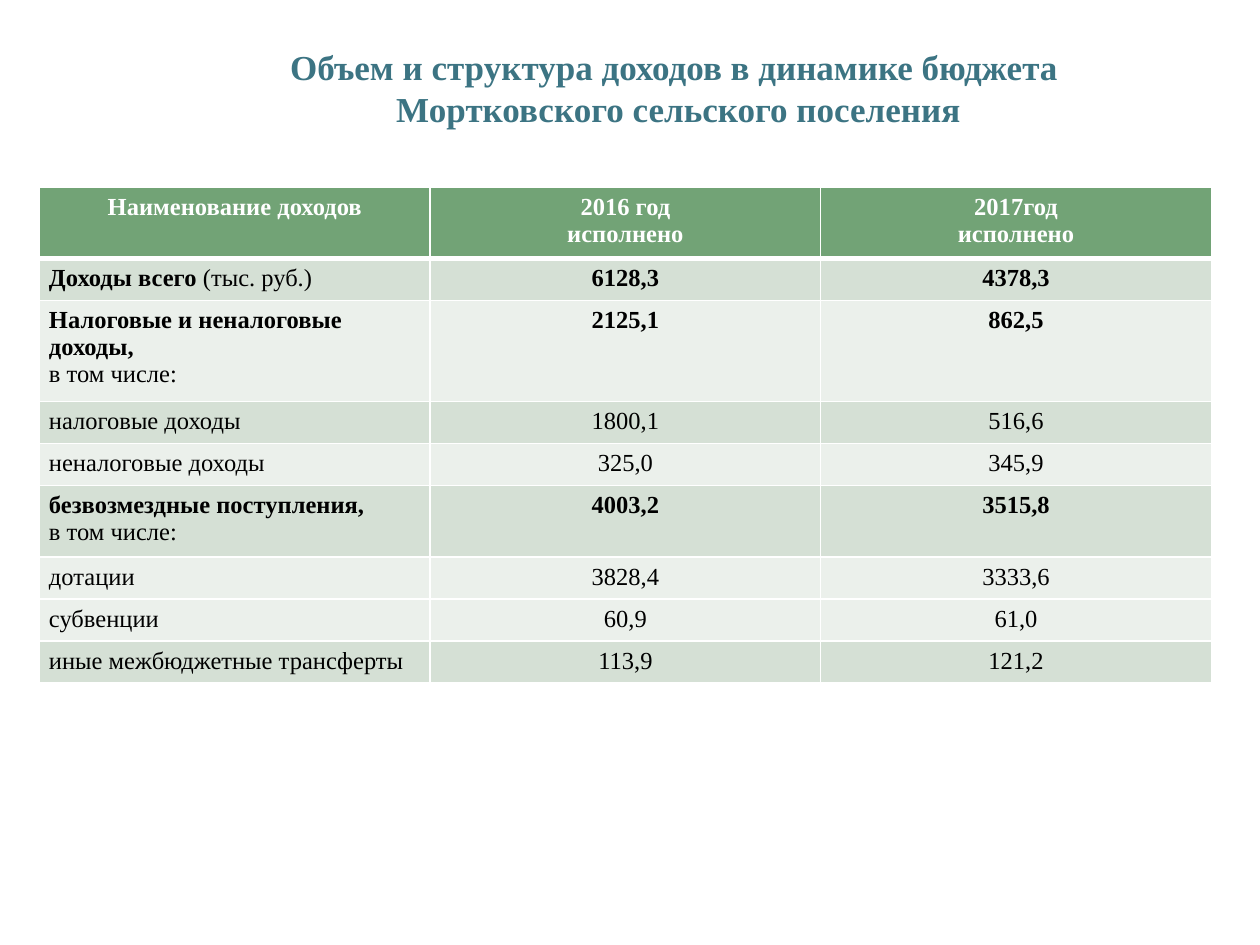
"""Build a slide with a table of settlement budget revenues for two years."""
from lxml.etree import SubElement
from pptx import Presentation
from pptx.dml.color import RGBColor
from pptx.enum.text import PP_ALIGN
from pptx.oxml.ns import qn
from pptx.util import Pt

COLORS = {
    "title": "3C7483",
    "header": "72A376",
    "dark": "D5E0D5",
    "light": "EBF0EB",
    "text": "000000",
    "white": "FFFFFF",
}
FONT = "Times New Roman"
LINE = 16.8


def add_text(tf, lines, size, color, align):
    for i, runs in enumerate(lines):
        p = tf.paragraphs[0] if i == 0 else tf.add_paragraph()
        p.alignment = align
        p.font.name = FONT
        p.font.size = Pt(size)
        p.font.color.rgb = RGBColor.from_string(COLORS[color])
        for text, bold in runs:
            r = p.add_run()
            r.text = text
            r.font.bold = bold


def set_borders(cell, widths):
    tc_pr = cell._tc.get_or_add_tcPr()
    for side, width in zip("LRTB", widths):
        ln = SubElement(tc_pr, qn(f"a:ln{side}"), w=str(Pt(width)))
        fill = SubElement(ln, qn("a:solidFill"))
        SubElement(fill, qn("a:srgbClr"), val=COLORS["white"])


prs = Presentation()
prs.slide_width, prs.slide_height = Pt(720), Pt(540)
s = prs.slides.add_slide(prs.slide_layouts[6])

title = s.shapes.add_textbox(Pt(84.2), Pt(22.3), Pt(602), Pt(55.4))
title.text_frame.word_wrap = True
title_lines = ["Объем и структура доходов в динамике бюджета", " Мортковского сельского поселения"]
add_text(title.text_frame, [[(line, True)] for line in title_lines], 20, "title", PP_ALIGN.CENTER)

including = [("в том числе:", False)]
rows = [
    ("header", 2, [[("Наименование доходов", True)]], "2016 год\nисполнено", "2017год\nисполнено", True),
    ("dark", 1, [[("Доходы всего ", True), ("(тыс. руб.)", False)]], "6128,3", "4378,3", True),
    ("light", 3, [[("Налоговые и неналоговые доходы,", True)], including], "2125,1", "862,5", True),
    ("dark", 1, [[("налоговые доходы", False)]], "1800,1", "516,6", False),
    ("light", 1, [[("неналоговые доходы", False)]], "325,0", "345,9", False),
    ("dark", 2, [[("безвозмездные поступления,", True)], including], "4003,2", "3515,8", True),
    ("light", 1, [[("дотации", False)]], "3828,4", "3333,6", False),
    ("light", 1, [[("субвенции", False)]], "60,9", "61,0", False),
    ("dark", 1, [[("иные межбюджетные трансферты", False)]], "113,9", "121,2", False),
]

frame = s.shapes.add_table(len(rows), 3, Pt(22.6), Pt(106.8), Pt(669.6), Pt(283))
table = frame.table
for i, (fill, line_count, label, first, second, bold) in enumerate(rows):
    table.rows[i].height = Pt(line_count * LINE)
    values = [[[(line, bold)] for line in value.split("\n")] for value in (first, second)]
    for j, lines in enumerate([label, *values]):
        cell = table.cell(i, j)
        cell.margin_left = cell.margin_right = Pt(5.4)
        cell.margin_top = cell.margin_bottom = Pt(3.6)
        set_borders(cell, (0.96, 0.96, 3 if i == 1 else 0.96, 3 if i == 0 else 0.96))
        cell.fill.solid()
        cell.fill.fore_color.rgb = RGBColor.from_string(COLORS[fill])
        align = PP_ALIGN.CENTER if i == 0 or j > 0 else PP_ALIGN.LEFT
        add_text(cell.text_frame, lines, 14, "white" if i == 0 else "text", align)
frame.height = Pt(283)

prs.save("out.pptx")
